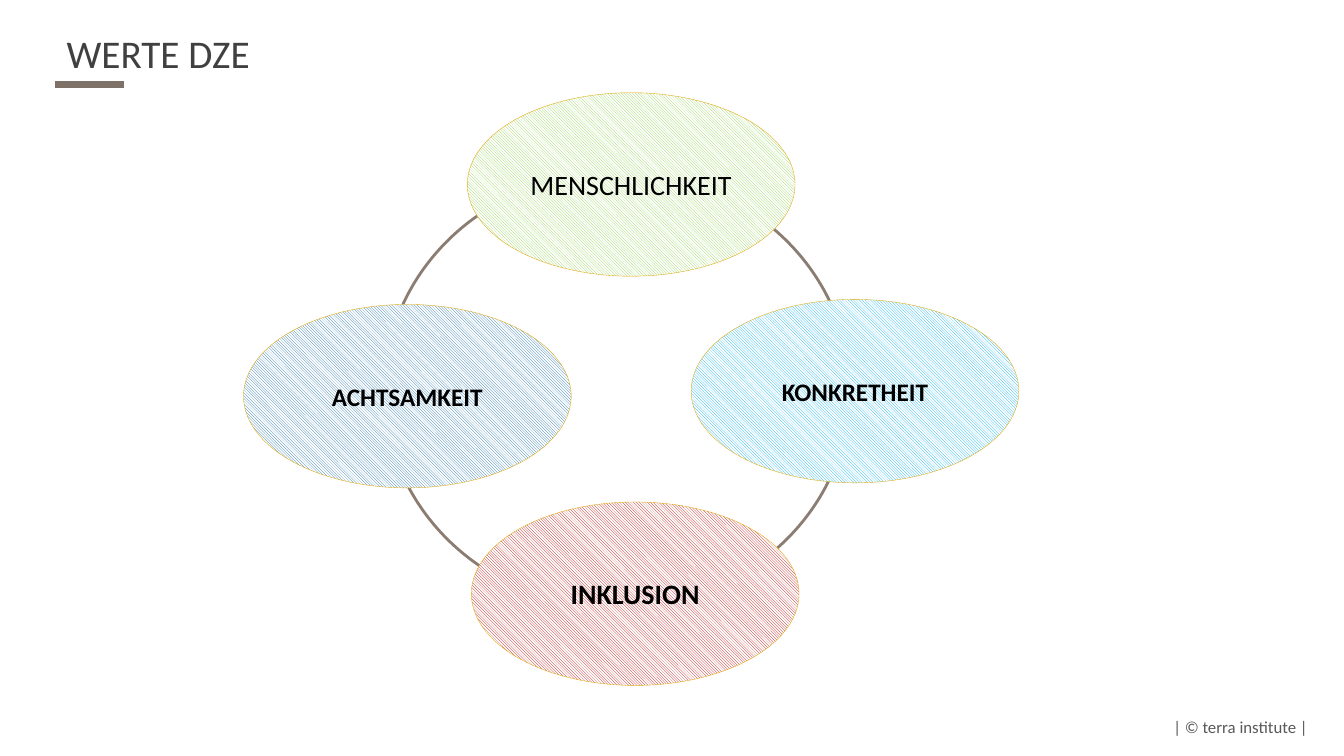
import pptx
import pptx.util
import pptx.dml.color
import pptx.enum.dml
import pptx.enum.shapes
import pptx.enum.text
from pptx.oxml.ns import qn
from lxml import etree

TITLE = "WERTE DZE"
FOOTER = "| © terra institute |"
COLORS = {
    "title": "404040", "footer": "595959", "rule": "7D7168", "ring": "8C7D73",
    "edge": "E0A807", "text": "000000", "white": "FFFFFF",
    "blue": "00B0F0", "navy": "1B6EAC", "green": "92D050", "red": "C00000",
}
VALUES = [
    ("KONKRETHEIT", "blue", 18, True, (8.48, 3.88)),
    ("ACHTSAMKEIT", "navy", 18, True, (4.04, 3.93)),
    ("MENSCHLICHKEIT", "green", 20, False, (6.26, 1.83)),
    ("INKLUSION", "red", 20, True, (6.3, 5.89)),
]
VALUE_W, VALUE_H = 3.25, 1.82
RING = (3.81, 1.71, 4.62, 4.32)

Inches, Pt = pptx.util.Inches, pptx.util.Pt
ALIGN = pptx.enum.text.PP_ALIGN
MIDDLE = pptx.enum.text.MSO_ANCHOR.MIDDLE


def rgb(name):
    return pptx.dml.color.RGBColor.from_string(COLORS[name])


def set_line(shape, color, width):
    shape.line.color.rgb = rgb(color)
    shape.line.width = Pt(width)


def write(shape, text, size, color, align, bold=False):
    tf = shape.text_frame
    tf.word_wrap = True
    tf.vertical_anchor = MIDDLE
    p = tf.paragraphs[0]
    p.text = text
    p.alignment = align
    p.font.name = "Calibri"
    p.font.size = Pt(size)
    p.font.bold = bold
    p.font.color.rgb = rgb(color)
    return tf


def add_ellipse(s, box):
    sp = s.shapes.add_shape(pptx.enum.shapes.MSO_SHAPE.OVAL, *map(Inches, box))
    sp.shadow.inherit = False
    return sp


def add_value(s, text, color, size, bold, center):
    x, y = center
    sp = add_ellipse(s, (x - VALUE_W / 2, y - VALUE_H / 2, VALUE_W, VALUE_H))
    sp.fill.patterned()
    sp.fill.pattern = pptx.enum.dml.MSO_PATTERN.LIGHT_DOWNWARD_DIAGONAL
    sp.fill.fore_color.rgb = rgb(color)
    sp.fill.back_color.rgb = rgb("white")
    set_line(sp, "edge", 0.25)
    write(sp, text, size, "text", ALIGN.CENTER, bold)


def main():
    prs = pptx.Presentation()
    prs.slide_width, prs.slide_height = Inches(13.33), Inches(7.5)
    s = prs.slides.add_slide(prs.slide_layouts[6])

    footer = s.shapes.add_textbox(*map(Inches, (10.76, 7.06, 2.31, 0.3)))
    write(footer, FOOTER, 12, "footer", ALIGN.RIGHT)

    rule = s.shapes.add_connector(
        pptx.enum.shapes.MSO_CONNECTOR.STRAIGHT, *map(Inches, (0.55, 0.84, 1.23, 0.84)))
    set_line(rule, "rule", 4.5)
    etree.SubElement(rule._element.spPr, qn("a:effectLst"))

    title = s.shapes.add_textbox(*map(Inches, (0.47, 0.21, 9.45, 0.63)))
    write(title, TITLE, 28, "title", ALIGN.LEFT).margin_left = Inches(0.19)

    ring = add_ellipse(s, RING)
    ring.fill.background()
    set_line(ring, "ring", 2)

    for value in VALUES:
        add_value(s, *value)

    prs.save("out.pptx")


if __name__ == "__main__":
    main()
